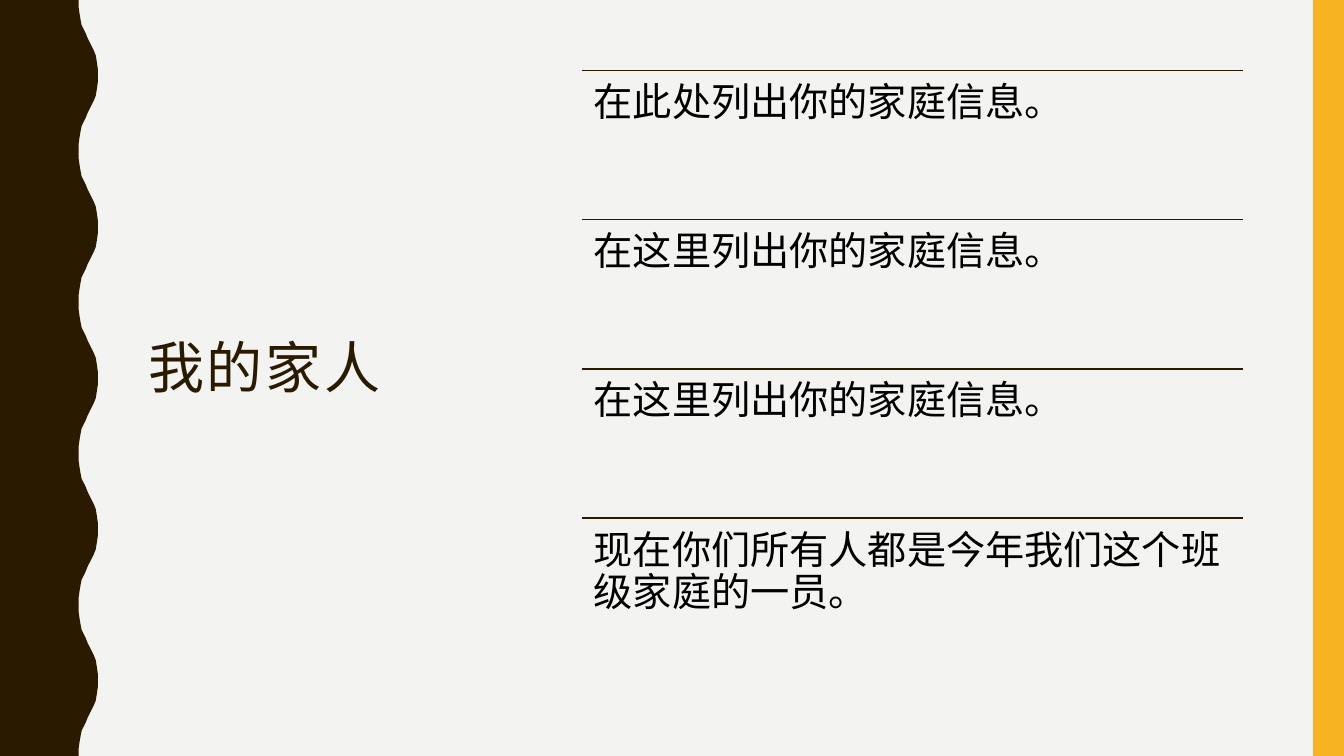
from lxml import etree
from pptx import Presentation
from pptx.dml.color import RGBColor
from pptx.enum.shapes import MSO_CONNECTOR, MSO_SHAPE
from pptx.enum.text import MSO_ANCHOR, MSO_AUTO_SIZE, PP_ALIGN
from pptx.oxml.ns import qn
from pptx.util import Inches, Pt

STRAIGHT = MSO_CONNECTOR.STRAIGHT
RECTANGLE = MSO_SHAPE.RECTANGLE
MIDDLE, TOP = MSO_ANCHOR.MIDDLE, MSO_ANCHOR.TOP
NO_AUTOFIT = MSO_AUTO_SIZE.NONE
LEFT = PP_ALIGN.LEFT

WIDTH, HEIGHT = 13.33, 7.5
BROWN, GOLD, PAPER, BLACK = "2A1A00", "F8B323", "F3F3F2", "000000"
CJK_FONT = "Noto Sans CJK SC"
WAVE_PERIOD = 1.5
RISING_WAVE = [
    (0, 0), (0, 0.07), (0.01, 0.14), (0.02, 0.2), (0.03, 0.25),
    (0.05, 0.29), (0.07, 0.33), (0.09, 0.38), (0.11, 0.42), (0.13, 0.46),
    (0.15, 0.5), (0.17, 0.55), (0.18, 0.61), (0.19, 0.68), (0.19, 0.75),
]
FAMILY_NOTES = [
    "在此处列出你的家庭信息。",
    "在这里列出你的家庭信息。",
    "在这里列出你的家庭信息。",
    "现在你们所有人都是今年我们这个班级家庭的一员。",
]


def color(hex_string):
    """Return the colour for a hex string."""
    return RGBColor.from_string(hex_string)


def paint(shape, fill):
    """Give a shape a flat fill without line or shadow."""
    shape.shadow.inherit = False
    shape.fill.solid()
    shape.fill.fore_color.rgb = color(fill)
    shape.line.fill.background()


def write(frame, wording, size, font_name, ink):
    """Put one left-aligned paragraph into a text frame."""
    frame.text = wording
    frame.word_wrap = True
    frame.auto_size = NO_AUTOFIT
    paragraph = frame.paragraphs[0]
    paragraph.alignment = LEFT
    paragraph.line_spacing = 0.9
    run = paragraph.runs[0]
    run.font.size = Pt(size)
    run.font.name = font_name
    run.font.color.rgb = color(ink)
    properties = run.font._element
    properties.set("lang", "zh-CN")
    etree.SubElement(properties, qn("a:ea")).set("typeface", CJK_FONT)
    return run


def add_wavy_edge(slide, left, top, width, height):
    """Draw the brown band whose right side waves around the given width."""
    falling = [(x, WAVE_PERIOD - y) for x, y in reversed(RISING_WAVE[:-1])]
    wave = RISING_WAVE + falling
    edge = [
        (left + width + x, top + cycle * WAVE_PERIOD + y)
        for cycle in range(round(height / WAVE_PERIOD))
        for x, y in wave
    ]
    outline = edge + [(left, top + height)]
    builder = slide.shapes.build_freeform(Inches(left), Inches(top))
    builder.add_line_segments([(Inches(x), Inches(y)) for x, y in outline])
    paint(builder.convert_to_shape(), BROWN)


def add_gold_bar(slide, left, top, width, height):
    """Draw the gold bar on the right."""
    bar = slide.shapes.add_shape(
        RECTANGLE, Inches(left), Inches(top), Inches(width), Inches(height))
    paint(bar, GOLD)


def add_title(slide, left, top, width, height):
    """Place and format the title placeholder."""
    title = slide.shapes.title
    title.left, title.top = Inches(left), Inches(top)
    title.width, title.height = Inches(width), Inches(height)
    title.text_frame.vertical_anchor = MIDDLE
    run = write(title.text_frame, "我的家人", 40, "Calibri", BROWN)
    run.font._element.set("spc", "200")


def add_note(slide, wording, left, top, width, height):
    """Place one note below its rule."""
    rule = slide.shapes.add_connector(
        STRAIGHT, Inches(left), Inches(top), Inches(left + width), Inches(top))
    rule.line.color.rgb = color(BROWN)
    rule.line.width = Pt(1)
    etree.SubElement(rule._element.spPr, qn("a:effectLst"))
    note = slide.shapes.add_textbox(
        Inches(left), Inches(top), Inches(width), Inches(height))
    frame = note.text_frame
    frame.margin_left = frame.margin_right = Inches(0.12)
    frame.margin_top = frame.margin_bottom = Inches(0.12)
    frame.vertical_anchor = TOP
    write(frame, wording, 28, CJK_FONT, BLACK)


def add_notes_list(slide, left, top, width, height):
    """Stack the family notes in equal rows."""
    row = height / len(FAMILY_NOTES)
    for index, wording in enumerate(FAMILY_NOTES):
        add_note(slide, wording, left, top + index * row, width, row)


def main():
    """Build and save the family slide."""
    deck = Presentation()
    deck.slide_width, deck.slide_height = Inches(WIDTH), Inches(HEIGHT)
    slide = deck.slides.add_slide(deck.slide_layouts[5])
    slide.background.fill.solid()
    slide.background.fill.fore_color.rgb = color(PAPER)
    add_wavy_edge(slide, 0, 0, 0.78, HEIGHT)
    add_gold_bar(slide, 13.02, 0, 0.31, HEIGHT)
    add_title(slide, 1.37, 0.71, 3.7, 5.93)
    add_notes_list(slide, 5.77, 0.7, 6.56, 5.92)
    deck.save("out.pptx")


if __name__ == "__main__":
    main()
